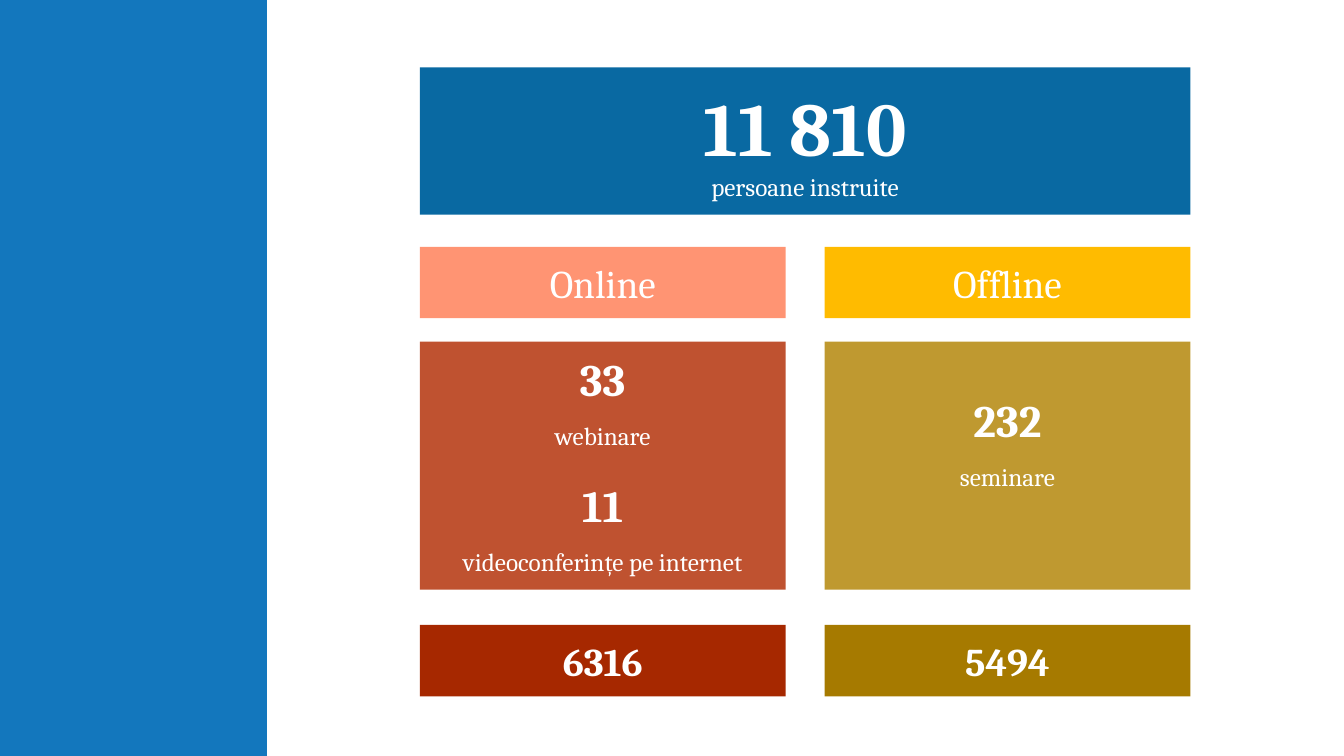
from pptx import Presentation
from pptx.dml.color import RGBColor
from pptx.enum.shapes import MSO_SHAPE
from pptx.enum.text import MSO_ANCHOR, PP_ALIGN
from pptx.util import Cm, Pt

RECTANGLE = MSO_SHAPE.RECTANGLE
MIDDLE = MSO_ANCHOR.MIDDLE
CENTER = PP_ALIGN.CENTER

WHITE = RGBColor(0xFF, 0xFF, 0xFF)
BAND_BLUE = RGBColor(0x13, 0x77, 0xBD)
TOTAL_BLUE = RGBColor(0x09, 0x69, 0xA2)
SALMON = RGBColor(0xFF, 0x94, 0x73)
BRICK = RGBColor(0xBF, 0x52, 0x30)
DARK_RED = RGBColor(0xA6, 0x28, 0x00)
YELLOW = RGBColor(0xFF, 0xBB, 0x00)
OCHRE = RGBColor(0xBF, 0x99, 0x30)
DARK_GOLD = RGBColor(0xA6, 0x7A, 0x00)

SLIDE_WIDTH, SLIDE_HEIGHT = 33.87, 19.05
BAND_WIDTH = 6.73
LEFT = 10.58
COLUMN_WIDTH = 9.22
COLUMN_STEP = 10.2
TOTAL_WIDTH = COLUMN_STEP + COLUMN_WIDTH

TOTAL = {"size": Pt(54), "bold": True}
FIGURE = {"size": Pt(32), "bold": True}
SUM = {"size": Pt(28), "bold": True}
HEADING = {"size": Pt(28), "bold": False}
LABEL = {"size": Pt(18), "bold": False}

COLUMNS = [
    {
        "heading": ("Online", SALMON),
        "details": [
            ("33", FIGURE),
            ("webinare", LABEL),
            ("11", FIGURE),
            ("videoconferințe pe internet", LABEL),
        ],
        "details_color": BRICK,
        "bottom_margin": 0.87,
        "sum": ("6316", DARK_RED),
    },
    {
        "heading": ("Offline", YELLOW),
        "details": [("232", FIGURE), ("seminare", LABEL)],
        "details_color": OCHRE,
        "bottom_margin": 1.99,
        "sum": ("5494", DARK_GOLD),
    },
]


class SlideBuilder:
    def __init__(self, slide):
        self.slide = slide
        self.font_name = "Cambria"
        self.text_color = WHITE

    def block(self, left, top, width, height, color):
        shape = self.slide.shapes.add_shape(
            RECTANGLE, Cm(left), Cm(top), Cm(width), Cm(height)
        )
        shape.shadow.inherit = False
        shape.fill.solid()
        shape.fill.fore_color.rgb = color
        shape.line.fill.background()
        return shape

    def label(self, shape, lines, line_spacing=1.0, bottom_margin=0.13):
        frame = shape.text_frame
        frame.word_wrap = True
        frame.vertical_anchor = MIDDLE
        frame.margin_bottom = Cm(bottom_margin)
        for index, (text, text_format) in enumerate(lines):
            paragraph = frame.add_paragraph() if index else frame.paragraphs[0]
            paragraph.alignment = CENTER
            paragraph.line_spacing = line_spacing
            run = paragraph.add_run()
            run.text = text
            run.font.name = self.font_name
            run.font.color.rgb = self.text_color
            for name, value in text_format.items():
                setattr(run.font, name, value)

    def column(self, left, column):
        for top, key, text_format in ((6.22, "heading", HEADING), (15.75, "sum", SUM)):
            text, color = column[key]
            shape = self.block(left, top, COLUMN_WIDTH, 1.8, color)
            self.label(shape, [(text, text_format)])
        details = self.block(left, 8.61, COLUMN_WIDTH, 6.25, column["details_color"])
        self.label(details, column["details"], 1.5, column["bottom_margin"])


def main():
    presentation = Presentation()
    presentation.slide_width = Cm(SLIDE_WIDTH)
    presentation.slide_height = Cm(SLIDE_HEIGHT)
    builder = SlideBuilder(presentation.slides.add_slide(presentation.slide_layouts[6]))

    builder.block(0, 0, BAND_WIDTH, SLIDE_HEIGHT, BAND_BLUE)
    total = builder.block(LEFT, 1.7, TOTAL_WIDTH, 3.71, TOTAL_BLUE)
    builder.label(total, [("11 810", TOTAL), ("persoane instruite", LABEL)])
    for index, column in enumerate(COLUMNS):
        builder.column(LEFT + index * COLUMN_STEP, column)

    presentation.save("out.pptx")


if __name__ == "__main__":
    main()
